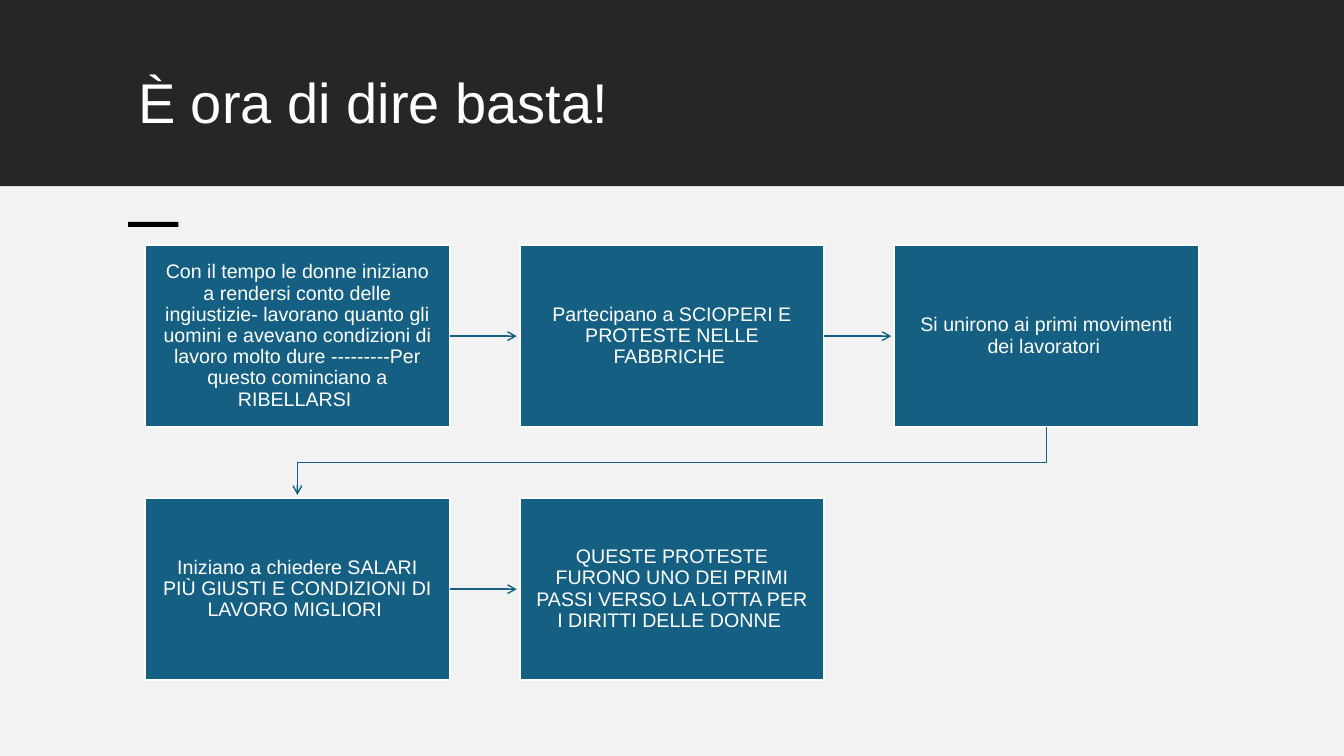
from lxml.etree import SubElement
from pptx import Presentation
from pptx.dml.color import RGBColor
from pptx.enum.shapes import MSO_CONNECTOR as Connector, MSO_SHAPE as Shape
from pptx.enum.text import MSO_ANCHOR as Anchor, MSO_AUTO_SIZE as AutoSize, PP_ALIGN as Align
from pptx.oxml.ns import qn
from pptx.util import Inches, Pt

COLORS = {"band": "262626", "body": "F2F2F2", "step": "156082",
          "white": "FFFFFF", "accent": "000000"}
FONT = "Arial"
COLUMNS = 3
STEP_WIDTH, STEP_HEIGHT = 3.02, 1.81
ARROW_GAP = 0.03

STEPS = [
    "Con il tempo le donne iniziano a rendersi conto delle ingiustizie- lavorano quanto gli "
    "uomini e avevano condizioni di lavoro molto dure ---------Per questo cominciano a RIBELLARSI ",
    "Partecipano a SCIOPERI E PROTESTE NELLE FABBRICHE ",
    "Si unirono ai primi movimenti dei lavoratori ",
    "Iniziano a chiedere SALARI PIÙ GIUSTI E CONDIZIONI DI LAVORO MIGLIORI ",
    "QUESTE PROTESTE FURONO UNO DEI PRIMI PASSI VERSO LA LOTTA PER I DIRITTI DELLE DONNE ",
]


def color(name):
    return RGBColor.from_string(COLORS[name])


def add_rectangle(page, left, top, width, height, fill):
    box = page.shapes.add_shape(Shape.RECTANGLE, Inches(left), Inches(top),
                                Inches(width), Inches(height))
    box.shadow.inherit = False
    box.fill.solid()
    box.fill.fore_color.rgb = color(fill)
    box.line.fill.background()
    return box


def write_text(frame, text, size, align):
    frame.word_wrap = True
    frame.auto_size = AutoSize.NONE
    para = frame.paragraphs[0]
    para.text = text
    para.alignment = align
    para.line_spacing = 0.9
    para.font.name = FONT
    para.font.size = Pt(size)
    para.font.color.rgb = color("white")


def style_arrow(arrow):
    arrow.line.color.rgb = color("step")
    arrow.line.width = Pt(1)
    line = arrow.line.fill and arrow.element.spPr.find(qn("a:ln"))
    SubElement(line, qn("a:tailEnd"), type="arrow")


def add_header(page, left, top, width, height):
    band = add_rectangle(page, left, top, width, height, "band")
    title = page.shapes.title
    title.element.addprevious(band.element)
    title.left, title.top = Inches(left + 1.27), Inches(top + 0.71)
    title.width, title.height = Inches(10.81), Inches(0.98)
    title.text_frame.vertical_anchor = Anchor.TOP
    write_text(title.text_frame, "È ora di dire basta!", 40, Align.LEFT)


def add_body(page, left, top, width, height):
    add_rectangle(page, left, top, width, height, "body")
    add_rectangle(page, left + 1.27, top + 0.35, 0.5, 0.05, "accent")


def add_step(page, left, top, text):
    step = add_rectangle(page, left, top, STEP_WIDTH, STEP_HEIGHT, "step")
    step.line.color.rgb = color("white")
    step.line.width = Pt(1.5)
    frame = step.text_frame
    frame.margin_left = frame.margin_right = Inches(0.15)
    frame.margin_top = frame.margin_bottom = Inches(0.16)
    frame.vertical_anchor = Anchor.MIDDLE
    write_text(frame, text, 14, Align.CENTER)
    return step


def add_side_arrow(page, start, end):
    middle = start.top + start.height // 2
    arrow = page.shapes.add_connector(Connector.STRAIGHT, start.left + start.width, middle,
                                      end.left - Inches(ARROW_GAP), middle)
    arrow.begin_connect(start, 3)
    style_arrow(arrow)
    SubElement(arrow.element.spPr, qn("a:effectLst"))


def add_return_arrow(page, start, end):
    start_x, end_x = (step.left + step.width // 2 for step in (start, end))
    start_y = start.top + start.height
    turn_y = (start_y + end.top) // 2
    builder = page.shapes.build_freeform(start_x, start_y)
    builder.add_line_segments([(start_x, turn_y), (end_x, turn_y),
                               (end_x, end.top - Inches(ARROW_GAP))], close=False)
    arrow = builder.convert_to_shape()
    arrow.shadow.inherit = False
    arrow.fill.background()
    style_arrow(arrow)


def add_flow(page, left, top, width, height):
    column_pitch = (width - STEP_WIDTH) / (COLUMNS - 1)
    row_pitch = height - STEP_HEIGHT
    steps = []
    for index, text in enumerate(STEPS):
        row, column = divmod(index, COLUMNS)
        steps.append(add_step(page, left + column * column_pitch, top + row * row_pitch, text))
    for start, end in zip(steps, steps[1:]):
        connect = add_side_arrow if start.top == end.top else add_return_arrow
        connect(page, start, end)


def main():
    deck = Presentation()
    deck.slide_width, deck.slide_height = Inches(13.33), Inches(7.5)
    page = deck.slides.add_slide(deck.slide_layouts[5])
    # Dark title band
    add_header(page, 0, -0.01, 13.33, 1.86)
    # Light area with the short accent bar
    add_body(page, 0, 1.85, 13.33, 5.65)
    # Steps of the protest, row by row
    add_flow(page, 1.44, 2.43, 10.45, 4.32)
    deck.save("out.pptx")


if __name__ == "__main__":
    main()
